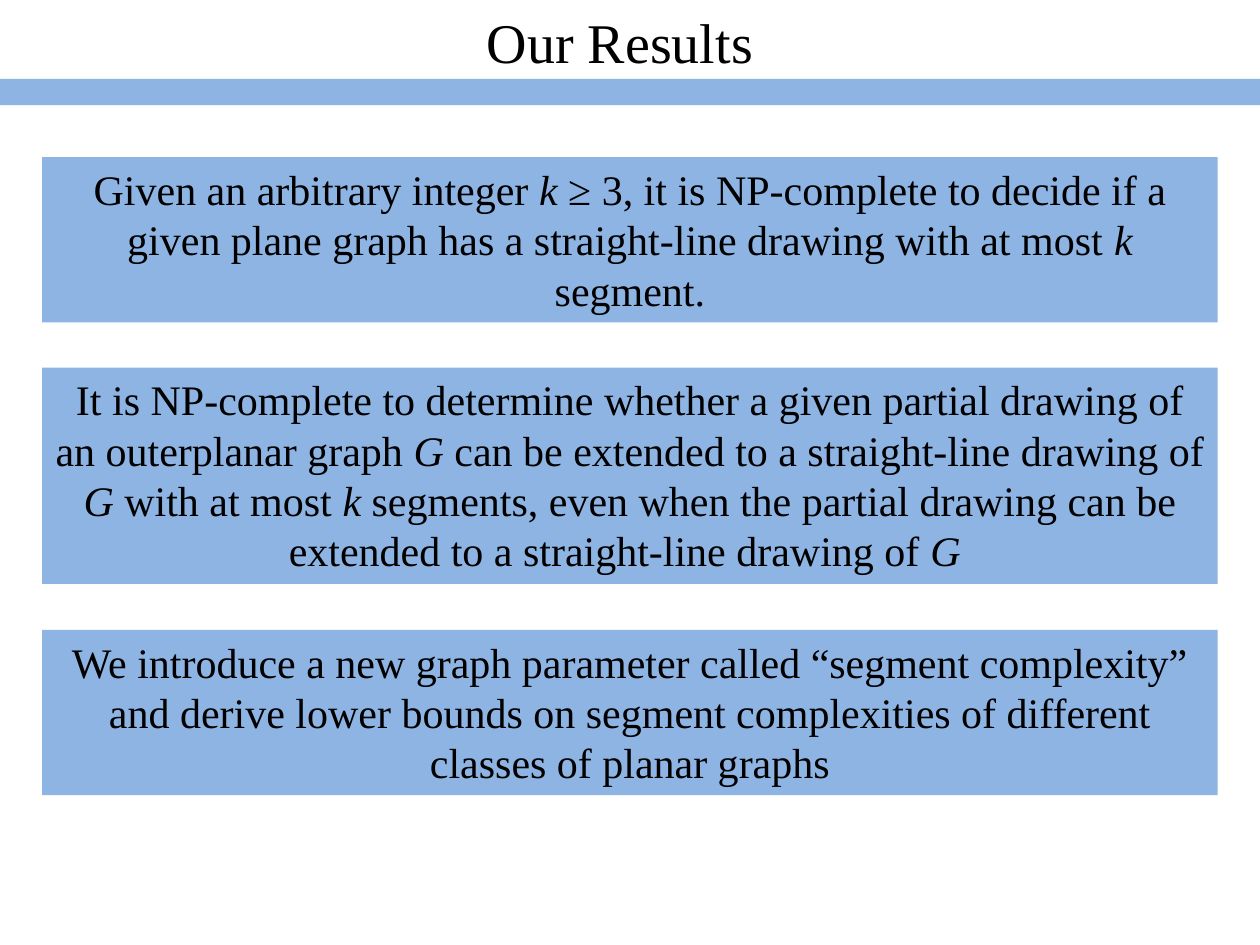
from dataclasses import dataclass

from pptx import Presentation
from pptx.dml.color import RGBColor
from pptx.enum.shapes import MSO_SHAPE
from pptx.enum.text import MSO_ANCHOR, MSO_AUTO_SIZE, PP_ALIGN
from pptx.util import Cm, Pt


@dataclass(frozen=True)
class Theme:
    font: str = "Times New Roman"
    text: RGBColor = RGBColor(0x00, 0x00, 0x00)
    band: RGBColor = RGBColor(0x8E, 0xB4, 0xE3)
    title_size: Pt = Pt(32)
    body_size: Pt = Pt(24)


theme = Theme()


def add_band(left, top, width, height):
    band = slide.shapes.add_shape(
        MSO_SHAPE.RECTANGLE, Cm(left), Cm(top), Cm(width), Cm(height))
    band.shadow.inherit = False
    band.fill.solid()
    band.fill.fore_color.rgb = theme.band
    band.line.fill.background()
    return band


def write_centred(frame, spans, size, anchor):
    """Write one paragraph; every second span is italic."""
    frame.word_wrap = True
    frame.vertical_anchor = anchor
    para = frame.paragraphs[0]
    para.alignment = PP_ALIGN.CENTER
    para.font.name = theme.font
    para.font.size = size
    para.font.color.rgb = theme.text
    for index, text in enumerate(spans):
        span = para.add_run()
        span.text = text
        if index % 2:
            span.font.italic = True


deck = Presentation()
deck.slide_width, deck.slide_height = Cm(25.4), Cm(19.05)
slide = deck.slides.add_slide(deck.slide_layouts[6])

# Title and the rule below it
title = slide.shapes.add_textbox(Cm(1.07), Cm(0.2), Cm(22.86), Cm(1.27))
write_centred(title.text_frame, ["Our Results"], theme.title_size, MSO_ANCHOR.MIDDLE)
add_band(0, 1.59, 25.4, 0.53)

# Result boxes: top, height, spans alternating upright and italic
results = [
    (3.17, 3.33, [
        "Given an arbitrary integer ", "k",
        " ≥ 3, it is NP-complete to decide if a given plane graph has a "
        "straight-line drawing with at most ", "k", " segment."]),
    (7.41, 4.36, [
        "It is NP-complete to determine whether a given partial drawing of "
        "an outerplanar graph ", "G",
        " can be extended to a straight-line drawing of ", "G",
        " with at most ", "k",
        " segments, even when the partial drawing can be extended to a "
        "straight-line drawing of ", "G "]),
    (12.7, 3.33, [
        "We introduce a new graph parameter called “segment complexity” and "
        "derive lower bounds on segment complexities of different classes of "
        "planar graphs"]),
]
for top, height, spans in results:
    box = add_band(0.85, top, 23.7, height)
    write_centred(box.text_frame, spans, theme.body_size, MSO_ANCHOR.TOP)
    box.text_frame.auto_size = MSO_AUTO_SIZE.SHAPE_TO_FIT_TEXT

deck.save("out.pptx")
